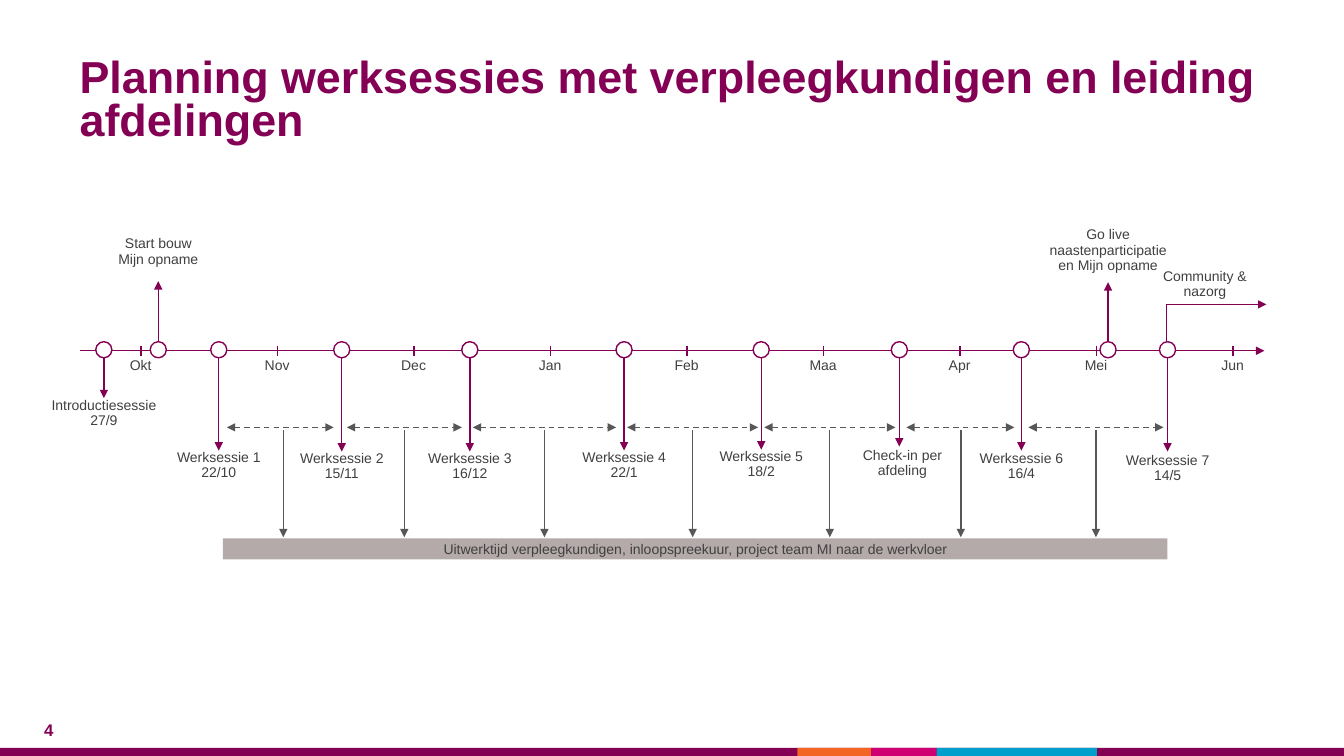
from dataclasses import dataclass

from lxml.etree import SubElement
from pptx import Presentation
from pptx.dml.color import RGBColor
from pptx.enum.dml import MSO_LINE
from pptx.enum.shapes import MSO_CONNECTOR, MSO_SHAPE
from pptx.enum.text import MSO_ANCHOR, PP_ALIGN
from pptx.oxml.ns import qn
from pptx.util import Inches, Pt


@dataclass(frozen=True)
class Theme:
    font: str = "Arial"
    purple: str = "840054"
    orange: str = "F26522"
    pink: str = "CF0072"
    blue: str = "019FCC"
    white: str = "FFFFFF"
    text: str = "404040"
    grey: str = "575757"
    bar: str = "B4AAAA"
    title_size: int = 32
    number_size: int = 12
    label_size: int = 10
    line_width: int = 1


THEME = Theme()
MONTHS = ["Okt", "Nov", "Dec", "Jan", "Feb", "Maa", "Apr", "Mei", "Jun"]
# Centre, arrow end, label and label offset (right, down)
SESSIONS = [
    (1.03, 3.95, "Introductiesessie\n27/9", 0, 0),
    (2.17, 4.47, "Werksessie 1\n22/10", 0, 0),
    (3.39, 4.48, "Werksessie 2\n15/11", 0, 0),
    (4.66, 4.48, "Werksessie 3\n16/12", 0, 0),
    (6.19, 4.47, "Werksessie 4\n22/1", 0, 0),
    (7.55, 4.46, "Werksessie 5\n18/2", 0, 0),
    (8.92, 4.43, "Check-in per afdeling", 0.03, 0.02),
    (10.13, 4.47, "Werksessie 6\n16/4", 0, 0.01),
    (11.58, 4.48, "Werksessie 7\n14/5", 0, 0.02),
]
# Centre, arrow end, label, label top, label width
MILESTONES = [
    (1.57, 2.79, "Start bouw Mijn opname", 2.35, 0.87),
    (10.99, 2.8, "Go live naastenparticipatie en Mijn opname", 2.26, 1.27),
]
# Start, end and downward arrow of each elaboration period
PERIODS = [
    (2.25, 3.31, 2.81), (3.44, 4.58, 4.01), (4.69, 6.11, 5.4),
    (6.22, 7.52, 6.87), (7.58, 8.88, 8.23), (8.99, 10.06, 9.53),
    (10.2, 11.54, 10.87),
]


def write(frame, text, *, size=THEME.label_size, color=THEME.text, bold=False,
          align=PP_ALIGN.CENTER, spacing=0.9, anchor=MSO_ANCHOR.TOP,
          margins=(0, 0, 0, 0)):
    frame.word_wrap = True
    frame.vertical_anchor = anchor
    (frame.margin_left, frame.margin_top,
     frame.margin_right, frame.margin_bottom) = map(Inches, margins)
    for index, line in enumerate(text.split("\n")):
        paragraph = frame.add_paragraph() if index else frame.paragraphs[0]
        paragraph.alignment = align
        paragraph.line_spacing = spacing
        run = paragraph.add_run()
        run.text = line
        run.font.name = THEME.font
        run.font.size = Pt(size)
        run.font.bold = bold
        run.font.color.rgb = RGBColor.from_string(color)


def add_text(slide, box, text, **style):
    write(slide.shapes.add_textbox(*map(Inches, box)).text_frame, text, **style)


def add_block(slide, box, fill, kind=MSO_SHAPE.RECTANGLE, outline=None):
    block = slide.shapes.add_shape(kind, *map(Inches, box))
    block.shadow.inherit = False
    block.fill.solid()
    block.fill.fore_color.rgb = RGBColor.from_string(fill)
    if outline:
        block.line.color.rgb = RGBColor.from_string(outline)
        block.line.width = Pt(THEME.line_width)
    else:
        block.line.fill.background()
    return block


def add_line(slide, start, end, color=THEME.purple, arrows=("tailEnd",),
             dashed=False):
    line = slide.shapes.add_connector(
        MSO_CONNECTOR.STRAIGHT, *map(Inches, (*start, *end)))
    line.line.color.rgb = RGBColor.from_string(color)
    line.line.width = Pt(THEME.line_width)
    if dashed:
        line.line.dash_style = MSO_LINE.DASH
    properties = line.element.spPr
    for arrow in arrows:
        SubElement(properties.find(qn("a:ln")), qn(f"a:{arrow}"), type="triangle")
    SubElement(properties, qn("a:effectLst"))
    return line


def add_marker(slide, x, y, size=0.16):
    add_block(slide, (x - size / 2, y - size / 2, size, size), THEME.white,
              MSO_SHAPE.OVAL, THEME.purple)


def add_title(slide, box):
    add_text(slide, box, "Planning werksessies met verpleegkundigen en leiding afdelingen",
             size=THEME.title_size, color=THEME.purple, bold=True,
             align=PP_ALIGN.LEFT, spacing=0.8)


def add_footer(slide, box):
    left, top, width, height = box
    add_block(slide, box, THEME.purple)
    for x, segment, color in [(7.91, 0.73, THEME.orange), (8.64, 0.65, THEME.pink),
                              (9.29, 1.59, THEME.blue)]:
        add_block(slide, (left + x, top, segment, height), color)
    add_text(slide, (left, top - 0.38, 0.65, 0.39), "4", size=THEME.number_size,
             color=THEME.purple, bold=True, align=PP_ALIGN.RIGHT,
             margins=(0, 0.12, 0.12, 0))


def add_axis(slide, box):
    left, y, width, _ = box
    add_line(slide, (left, y), (left + width, y))
    first, last = left + 0.61, left + 11.44
    step = (last - first) / (len(MONTHS) - 1)
    for index, month in enumerate(MONTHS):
        x = first + index * step
        add_line(slide, (x, y - 0.05), (x, y + 0.05), arrows=())
        add_text(slide, (x - 0.22, y + 0.08, 0.43, 0.18), month)


def add_milestones(slide, y):
    for x, end, label, top, width in MILESTONES:
        add_line(slide, (x, y - 0.08), (x, end))
        add_marker(slide, x, y - 0.01)
        add_text(slide, (x - width / 2, top, width, 0.52), label)


def add_aftercare(slide, box):
    left, top, width, height = box
    # An upright elbow is a quarter turn of a lying one around the same centre
    x, y = left + (width - height) / 2, top + (height - width) / 2
    elbow = add_line(slide, (x, y), (x + height, y + width))
    properties = elbow.element.spPr
    properties.find(qn("a:xfrm")).set("rot", str(270 * 60000))
    properties.find(qn("a:prstGeom")).set("prst", "bentConnector2")
    add_text(slide, (left - 0.21, top - 0.35, 1.18, 0.21), "Community & nazorg")


def add_sessions(slide, y, width=1.18):
    for x, end, label, right, down in SESSIONS:
        add_line(slide, (x, y + 0.07), (x, end))
        add_marker(slide, x, y - 0.01)
        add_text(slide, (x + right - width / 2, end + down, width, 0.35), label)


def add_elaboration(slide, box):
    left, top, width, height = box
    bar_height = 0.21
    bar_top = top + height - bar_height
    for start, end, middle in PERIODS:
        add_line(slide, (start, top), (end, top), THEME.grey,
                 ("headEnd", "tailEnd"), dashed=True)
        add_line(slide, (middle, top + 0.03), (middle, bar_top - 0.01), THEME.grey)
    bar = add_block(slide, (left, bar_top, width, bar_height), THEME.bar)
    write(bar.text_frame,
          "Uitwerktijd verpleegkundigen, inloopspreekuur, project team MI naar de werkvloer",
          spacing=1.0, anchor=MSO_ANCHOR.MIDDLE)


def main():
    presentation = Presentation()
    presentation.slide_width = Inches(13.33)
    presentation.slide_height = Inches(7.5)
    slide = presentation.slides.add_slide(presentation.slide_layouts[6])
    axis_y = 3.48

    add_footer(slide, (0, 7.42, 13.33, 0.08))
    add_title(slide, (0.79, 0.59, 11.76, 0.79))
    add_axis(slide, (0.79, axis_y, 11.75, 0))
    add_aftercare(slide, (11.57, 3.02, 0.99, 0.4))
    add_milestones(slide, axis_y)
    add_sessions(slide, axis_y)
    add_elaboration(slide, (2.21, 4.24, 9.37, 1.31))
    presentation.save("out.pptx")


if __name__ == "__main__":
    main()
